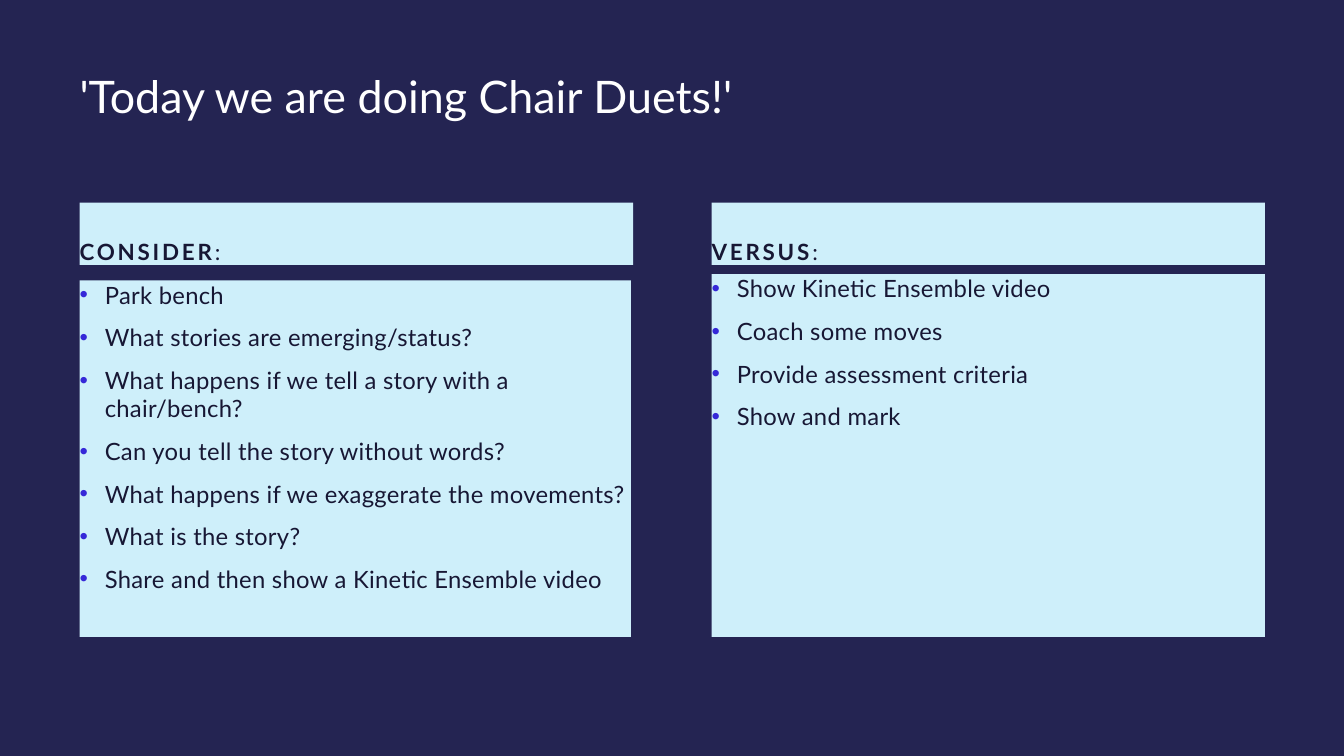
"""Build the Chair Duets lesson slide."""
import dataclasses

import lxml.etree
import pptx
import pptx.dml.color
import pptx.enum.shapes
import pptx.enum.text
import pptx.oxml.ns
import pptx.util

Pt = pptx.util.Pt
FONT = "Lato"
COLORS = {
    "navy": "242452",
    "white": "FFFFFF",
    "pale": "CEEFFA",
    "ink": "171734",
    "dot": "3528D8",
}
LEFT, RIGHT = 56.9, 508.3
HEAD_TOP, HEAD_HIGH = 144.7, 44.6
HEAD_WIDE = 395.3
BASE = 455
INDENT = 18


@dataclasses.dataclass
class Panel:
    left: float
    head: str
    top: float
    wide: float
    points: list[str]


PANELS = [
    Panel(LEFT, "CONSIDER", 200.2, 393.8, [
        "Park bench",
        "What stories are emerging/status?",
        "What happens if we tell a story with a chair/bench?",
        "Can you tell the story without words?",
        "What happens if we exaggerate the movements?",
        "What is the story?",
        "Share and then show a Kinetic Ensemble video",
    ]),
    Panel(RIGHT, "VERSUS", 195.8, HEAD_WIDE, [
        "Show Kinetic Ensemble video",
        "Coach some moves",
        "Provide assessment criteria",
        "Show and mark",
    ]),
]


def shade(name: str) -> pptx.dml.color.RGBColor:
    return pptx.dml.color.RGBColor.from_string(COLORS[name])


def set_frame(frame, anchor) -> None:
    frame.word_wrap = True
    frame.vertical_anchor = anchor
    frame.margin_left = frame.margin_right = Pt(0)
    frame.margin_top = frame.margin_bottom = Pt(0)


def style(run, size: float, color: str, gap: float = 0, bold: bool = False) -> None:
    run.font.name = FONT
    run.font.size = Pt(size)
    run.font.bold = bold
    run.font.color.rgb = shade(color)
    run._r.get_or_add_rPr().set("spc", str(round(gap * 100)))


def add_box(slide, left: float, top: float, wide: float, high: float, anchor):
    box = slide.shapes.add_shape(
        pptx.enum.shapes.MSO_SHAPE.RECTANGLE, Pt(left), Pt(top), Pt(wide), Pt(high))
    box.shadow.inherit = False
    box.fill.solid()
    box.fill.fore_color.rgb = shade("pale")
    box.line.fill.background()
    set_frame(box.text_frame, anchor)
    return box.text_frame


def space(para) -> None:
    para.alignment = pptx.enum.text.PP_ALIGN.LEFT
    para.space_before = Pt(10)


def add_dot(para) -> None:
    qn = pptx.oxml.ns.qn
    props = para._p.get_or_add_pPr()
    props.set("marL", str(Pt(INDENT)))
    props.set("indent", str(-Pt(INDENT)))
    color = lxml.etree.SubElement(props, qn("a:buClr"))
    lxml.etree.SubElement(color, qn("a:srgbClr")).set("val", COLORS["dot"])
    lxml.etree.SubElement(props, qn("a:buFont")).set("typeface", "Arial")
    lxml.etree.SubElement(props, qn("a:buChar")).set("char", "•")


def add_panel(slide, panel: Panel) -> None:
    anchor = pptx.enum.text.MSO_ANCHOR
    head = add_box(slide, panel.left, HEAD_TOP, HEAD_WIDE, HEAD_HIGH, anchor.BOTTOM)
    para = head.paragraphs[0]
    para.text = panel.head
    para.add_run().text = ":"
    space(para)
    para.line_spacing = 1.2
    word, colon = para.runs
    style(word, 16, "ink", 2, True)
    style(colon, 16, "ink", 2)

    body = add_box(slide, panel.left, panel.top, panel.wide, BASE - panel.top, anchor.TOP)
    body.text = "\n".join(panel.points)
    for para in body.paragraphs:
        space(para)
        add_dot(para)
        style(para.runs[0], 17, "ink", 0.2)


def add_title(slide) -> None:
    box = slide.shapes.add_textbox(Pt(LEFT), Pt(49), Pt(844.6), Pt(53.3))
    set_frame(box.text_frame, pptx.enum.text.MSO_ANCHOR.TOP)
    box.text_frame.text = "'Today we are doing Chair Duets!'"
    style(box.text_frame.paragraphs[0].runs[0], 32, "white")


def main() -> None:
    deck = pptx.Presentation()
    deck.slide_width, deck.slide_height = Pt(960), Pt(540)
    slide = deck.slides.add_slide(deck.slide_layouts[6])
    slide.background.fill.solid()
    slide.background.fill.fore_color.rgb = shade("navy")
    add_title(slide)
    for panel in PANELS:
        add_panel(slide, panel)
    deck.save("out.pptx")


if __name__ == "__main__":
    main()
